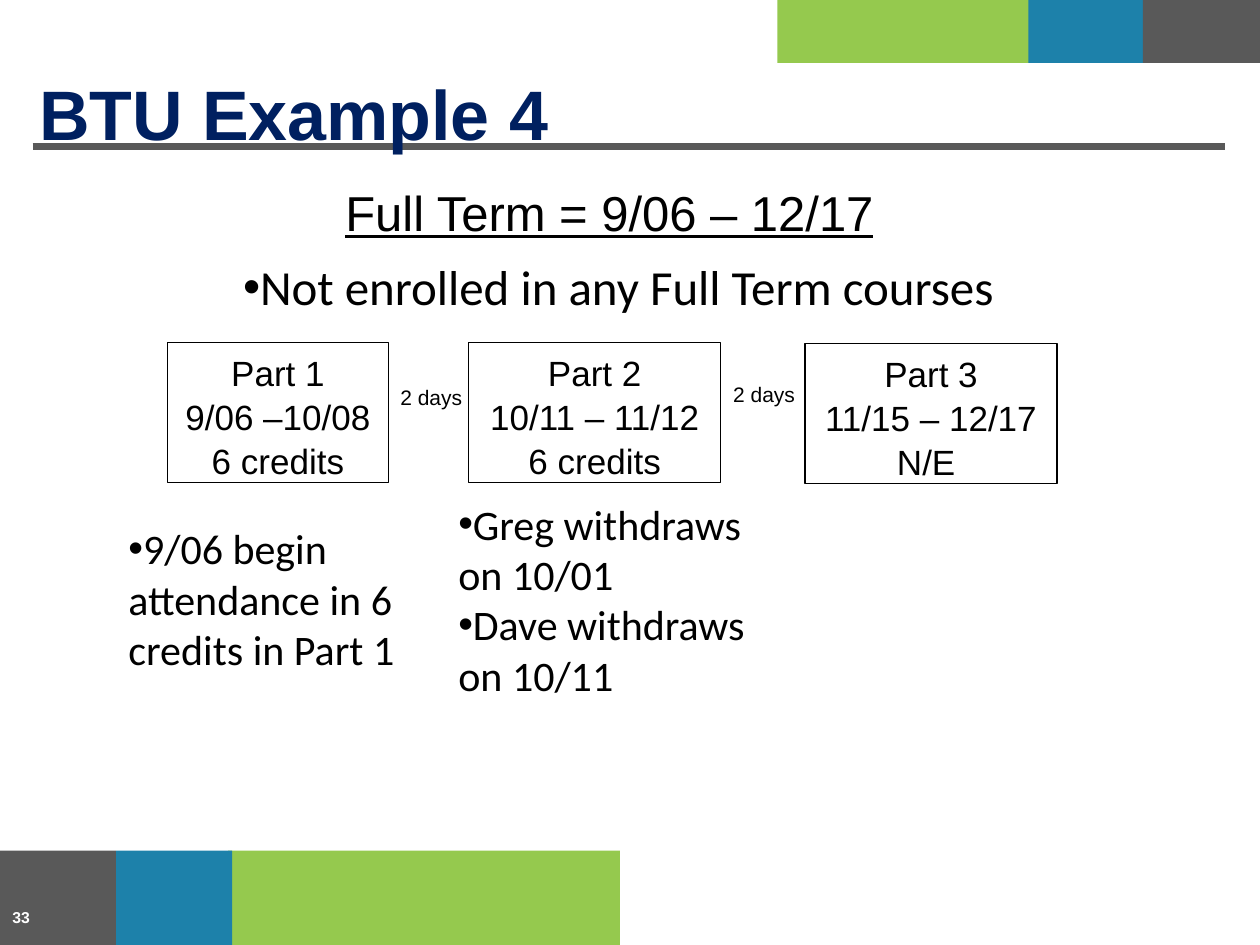
import pptx
import pptx.dml.color
import pptx.enum.shapes
import pptx.enum.text
import pptx.oxml
import pptx.oxml.ns
import pptx.util
from lxml import etree

Cm = pptx.util.Cm
Pt = pptx.util.Pt
Align = pptx.enum.text.PP_ALIGN
Anchor = pptx.enum.text.MSO_ANCHOR
qn = pptx.oxml.ns.qn

GREEN, BLUE, GRAY = "95C94E", "1D81AA", "595959"
NAVY, BLACK, WHITE = "002060", "000000", "FFFFFF"


def color(code):
    return pptx.dml.color.RGBColor.from_string(code)


def add_rect(slide, left, top, width, height):
    kind = pptx.enum.shapes.MSO_SHAPE.RECTANGLE
    rect = slide.shapes.add_shape(kind, Cm(left), Cm(top), Cm(width), Cm(height))
    rect.shadow.inherit = False
    return rect


def add_block(slide, box, fill):
    rect = add_rect(slide, *box)
    rect.fill.solid()
    rect.fill.fore_color.rgb = color(fill)
    rect.line.fill.background()


def add_rule(slide, left, right, top):
    kind = pptx.enum.shapes.MSO_CONNECTOR.STRAIGHT
    rule = slide.shapes.add_connector(kind, Cm(left), Cm(top), Cm(right), Cm(top))
    rule.line.color.rgb = color(GRAY)
    rule.line.width = Pt(4)
    etree.SubElement(rule._element.spPr, qn("a:effectLst"))


def add_bullet(para):
    props = para._p.get_or_add_pPr()
    props.set("marL", "0")
    props.set("indent", "0")
    font = etree.SubElement(props, qn("a:buFont"))
    font.set("typeface", "Arial")
    etree.SubElement(props, qn("a:buChar")).set("char", "•")


def fill_text(frame, text, size, font="Arial", tint=BLACK, bold=False,
              under=False, align=Align.LEFT, bullet=False, space=None):
    frame.word_wrap = True
    frame.text = text
    for para in frame.paragraphs:
        para.alignment = align
        para.line_spacing = space
        if bullet:
            add_bullet(para)
        for run in para.runs:
            run.font.size = Pt(size)
            run.font.name = font
            run.font.bold = bold
            run.font.underline = under
            run.font.color.rgb = color(tint)


def add_text(slide, box, text, size, inset=0.13, anchor=Anchor.TOP, **style):
    """Add a text box; inset is its top margin in cm."""
    left, top, width, height = map(Cm, box)
    frame = slide.shapes.add_textbox(left, top, width, height).text_frame
    frame.margin_top = Cm(inset)
    frame.vertical_anchor = anchor
    fill_text(frame, text, size, **style)
    return frame


def add_card(slide, box, text):
    card = add_rect(slide, *box)
    card.fill.background()
    card.line.color.rgb = color(BLACK)
    card.line.width = Pt(0.75)
    card.text_frame.vertical_anchor = Anchor.TOP
    fill_text(card.text_frame, text, 20, align=Align.CENTER, space=1.05)


def add_bands(slide):
    low, high = (17.15, 1.96), (0, 1.27)
    bands = [
        (4.6, 7.9, low, GREEN), (2.34, 2.34, low, BLUE), (-0.05, 2.39, low, GRAY),
        (15.67, 5.13, high, GREEN), (20.73, 2.34, high, BLUE), (23.04, 2.39, high, GRAY),
    ]
    for left, width, (top, height), fill in bands:
        add_block(slide, (left, top, width, height), fill)


def add_parts(slide):
    parts = [
        (3.38, 6.91, 4.45, "Part 1\n9/06 –10/08\n6 credits"),
        (9.45, 6.91, 5.08, "Part 2\n10/11 – 11/12\n6 credits"),
        (16.23, 6.93, 5.08, "Part 3\n11/15 – 12/17\nN/E "),
    ]
    for left, top, width, text in parts:
        add_card(slide, (left, top, width, 2.82), text)
    for box in [(7.82, 7.62, 2.11, 0.76), (14.53, 7.57, 2.39, 0.76)]:
        add_text(slide, box, "2 days", 12)


def add_notes(slide):
    notes = [
        ((2.34, 10.41, 6.55, 3.33), 24, "9/06 begin attendance in 6 credits in Part 1"),
        ((8.99, 9.91, 6.55, 4.37), 24, "Greg withdraws on 10/01\nDave withdraws on 10/11"),
        ((4.65, 5.05, 20.45, 2.64), 28, "Not enrolled in any Full Term courses"),
    ]
    for box, size, text in notes:
        add_text(slide, box, text, size, font="Calibri", bullet=True)


def main():
    deck = pptx.Presentation()
    deck.slide_width, deck.slide_height = Cm(25.4), Cm(19.05)
    slide = deck.slides.add_slide(deck.slide_layouts[6])
    add_bands(slide)
    add_rule(slide, 0.66, 24.69, 2.95)
    title = add_text(slide, (0.64, 1.14, 23.75, 1.8), "BTU Example 4", 40,
                     inset=0.28, tint=NAVY, bold=True)
    title.margin_left = Cm(0.15)
    add_text(slide, (0, 17.98, 5.92, 1.02), "33", 9, anchor=Anchor.MIDDLE,
             tint=WHITE, bold=True)
    add_parts(slide)
    add_text(slide, (2.34, 3.45, 19.89, 2.64), "Full Term = 9/06 – 12/17", 28,
             inset=0.22, under=True, align=Align.CENTER)
    add_notes(slide)
    deck.save("out.pptx")


if __name__ == "__main__":
    main()
